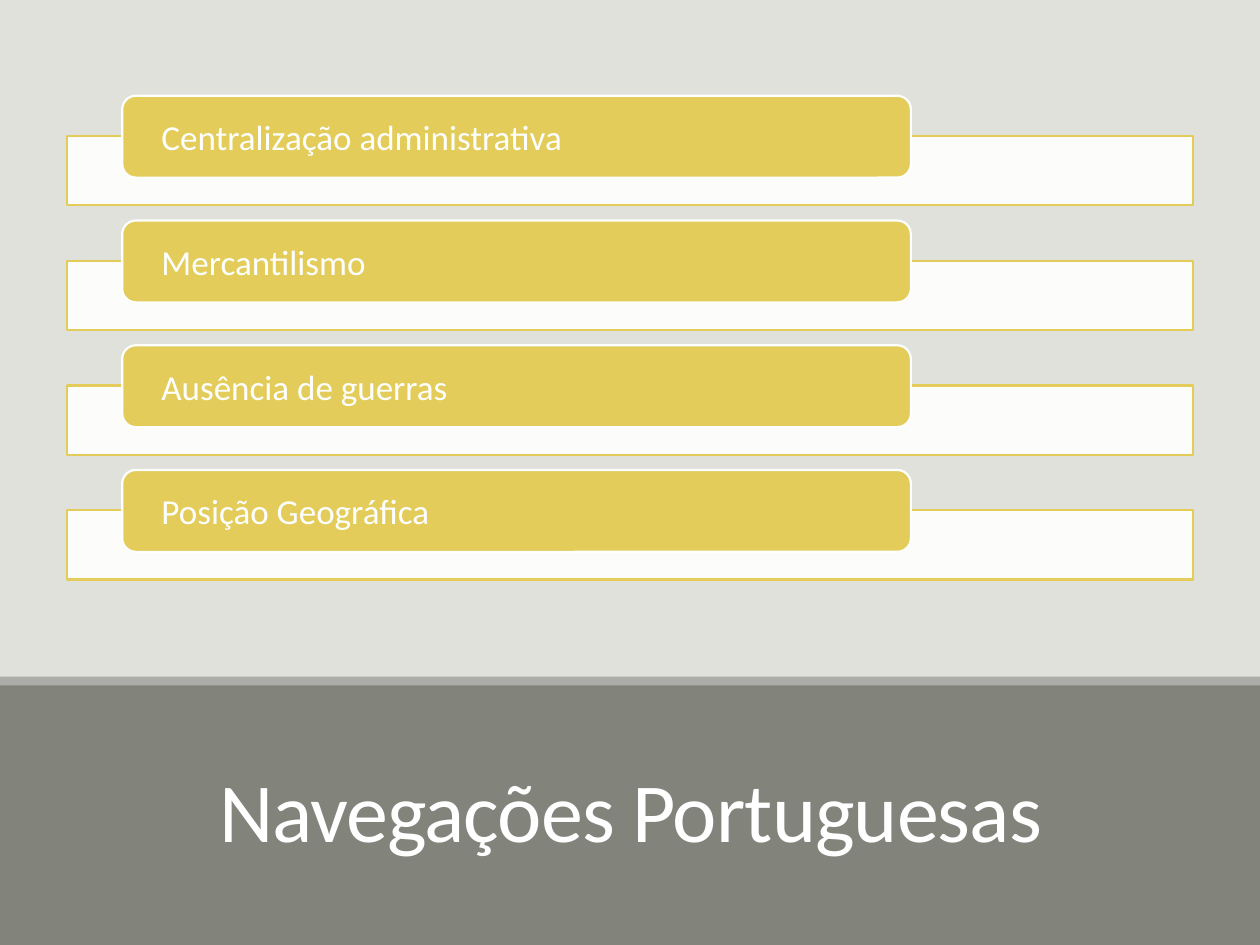
import pptx
import pptx.util
import pptx.dml.color
import pptx.enum.shapes
import pptx.enum.text
import pptx.oxml.ns
import lxml.etree

Inches = pptx.util.Inches
RGBColor = pptx.dml.color.RGBColor
SHAPE = pptx.enum.shapes.MSO_SHAPE
ANCHOR = pptx.enum.text.MSO_ANCHOR
ALIGN = pptx.enum.text.PP_ALIGN

TITLE = "Navegações Portuguesas"
FACTORS = [
    "Centralização administrativa",
    "Mercantilismo",
    "Ausência de guerras",
    "Posição Geográfica",
]

WHITE = RGBColor(0xFF, 0xFF, 0xFF)
GOLD = RGBColor(0xE3, 0xCC, 0x5A)
BACKGROUND = RGBColor(0xE1, 0xE1, 0xDB)
FOOTER = RGBColor(0x82, 0x84, 0x7C)
RULE = RGBColor(0xAC, 0xAD, 0xA8)

LABEL_TOP = 0.76
BAR_OFFSET = 0.32
ROW_STEP = 0.99

TITLE_FRAME = {"word_wrap": True, "vertical_anchor": ANCHOR.BOTTOM}
TITLE_PARA = {"alignment": ALIGN.CENTER, "line_spacing": 0.85}
TITLE_FONT = {"name": "Calibri", "size": pptx.util.Pt(48)}
LABEL_FRAME = {
    "word_wrap": True,
    "vertical_anchor": ANCHOR.MIDDLE,
    "margin_left": Inches(0.28),
    "margin_right": Inches(0.28),
    "margin_top": 0,
    "margin_bottom": 0,
}
LABEL_PARA = {"alignment": ALIGN.LEFT}
LABEL_FONT = {"name": "Calibri", "size": pptx.util.Pt(20)}


def apply(target, values):
    for name, value in values.items():
        setattr(target, name, value)


def add_panel(page, kind, place, fill, line=None):
    panel = page.shapes.add_shape(kind, *map(Inches, place))
    panel.shadow.inherit = False
    panel.fill.solid()
    panel.fill.fore_color.rgb = fill
    if line is None:
        panel.line.fill.background()
    else:
        panel.line.color.rgb = line
        panel.line.width = pptx.util.Pt(1.25)
    return panel


def write_text(box, text, frame_values, para_values, font_values):
    apply(box.text_frame, frame_values)
    para = box.text_frame.paragraphs[0]
    apply(para, para_values)
    span = para.add_run()
    span.text = text
    apply(span.font, font_values)
    span.font.color.rgb = WHITE
    return span


def set_opacity(panel, percent):
    color = panel.fill._xPr.find(".//" + pptx.oxml.ns.qn("a:srgbClr"))
    alpha = lxml.etree.SubElement(color, pptx.oxml.ns.qn("a:alpha"))
    alpha.set("val", str(percent * 1000))


def add_factor(page, index, text):
    top = LABEL_TOP + index * ROW_STEP
    bar = add_panel(page, SHAPE.RECTANGLE, (0.53, top + BAR_OFFSET, 8.94, 0.55), WHITE, GOLD)
    set_opacity(bar, 90)
    label = add_panel(page, SHAPE.ROUNDED_RECTANGLE, (0.97, top, 6.26, 0.65), GOLD, WHITE)
    write_text(label, text, LABEL_FRAME, LABEL_PARA, LABEL_FONT)


def main():
    deck = pptx.Presentation()
    apply(deck, {"slide_width": Inches(10), "slide_height": Inches(7.5)})
    page = deck.slides.add_slide(deck.slide_layouts[6])
    page.background.fill.solid()
    page.background.fill.fore_color.rgb = BACKGROUND

    add_panel(page, SHAPE.RECTANGLE, (0, 5.42, 10, 2.08), FOOTER)
    title = page.shapes.add_textbox(*map(Inches, (0.88, 5.74, 8.25, 1.13)))
    span = write_text(title, TITLE, TITLE_FRAME, TITLE_PARA, TITLE_FONT)
    span.font._element.set("spc", "-50")
    add_panel(page, SHAPE.RECTANGLE, (0, 5.37, 10, 0.07), RULE)

    for index, text in enumerate(FACTORS):
        add_factor(page, index, text)
    deck.save("out.pptx")


if __name__ == "__main__":
    main()
